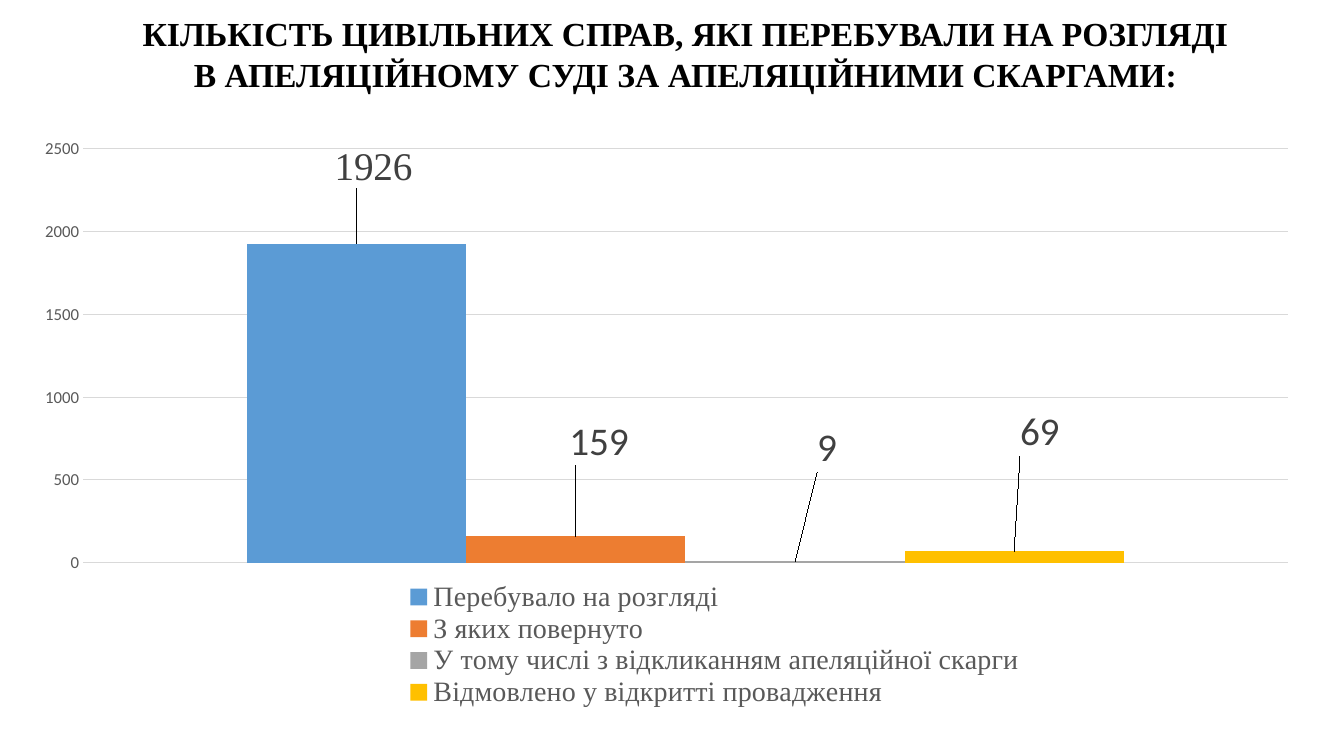
"""Build a slide with a column chart of civil cases in the court of appeal."""
from dataclasses import dataclass

from lxml import etree
from pptx import Presentation
from pptx import util as u
from pptx.chart import data as chart_data
from pptx.dml import color
from pptx.enum import chart as chart_enum
from pptx.enum import text
from pptx.oxml import ns


@dataclass(frozen=True)
class Theme:
    """Colours, fonts and type sizes of the slide."""
    serif: str = "Times New Roman"
    sans: str = "Calibri"
    title: str = "000000"
    muted: str = "595959"
    label: str = "404040"
    grid: str = "D9D9D9"
    title_size: int = 24
    axis_size: int = 12
    legend_size: int = 20
    label_size: int = 28


THEME = Theme()
TITLE = (
    "КІЛЬКІСТЬ ЦИВІЛЬНИХ СПРАВ, ЯКІ ПЕРЕБУВАЛИ НА РОЗГЛЯДІ",
    "В АПЕЛЯЦІЙНОМУ СУДІ ЗА АПЕЛЯЦІЙНИМИ СКАРГАМИ:",
)
CASES = (
    ("Перебувало на розгляді", 1926, "5B9BD5", THEME.serif, (0.013, -0.085)),
    ("З яких повернуто", 159, "ED7D31", THEME.sans, (0.018, -0.11)),
    ("У тому числі з відкликанням апеляційної скарги", 9, "A5A5A5",
     THEME.sans, (0.025, -0.14)),
    ("Відмовлено у відкритті провадження", 69, "FFC000", THEME.sans,
     (0.02, -0.15)),
)


def style_font(font, name, size, colour, bold=False):
    """Set the face, size, colour and weight of a font."""
    font.name = name
    font.size = u.Pt(size)
    font.bold = bold
    font.color.rgb = color.RGBColor.from_string(colour)


def set_layout(element, index, **settings):
    """Give a chart element a manual layout at a child index."""
    for old in element.findall(ns.qn("c:layout")):
        element.remove(old)
    layout = etree.Element(ns.qn("c:layout"))
    manual = etree.SubElement(layout, ns.qn("c:manualLayout"))
    for tag, value in settings.items():
        etree.SubElement(manual, ns.qn(f"c:{tag}")).set("val", str(value))
    element.insert(index, layout)


def add_title(page, lines):
    """Add the centred heading, one paragraph per line."""
    box = page.shapes.add_textbox(u.Pt(90.7), u.Pt(5.8), u.Pt(797.8), u.Pt(65.5))
    frame = box.text_frame
    frame.word_wrap = False
    frame.auto_size = text.MSO_AUTO_SIZE.SHAPE_TO_FIT_TEXT
    frame.text = "\n".join(lines)
    for para in frame.paragraphs:
        para.alignment = text.PP_ALIGN.CENTER
        style_font(para.font, THEME.serif, THEME.title_size, THEME.title, True)


def style_axes(chart):
    """Hide the category axis and lighten the value axis."""
    chart.category_axis.visible = False
    axis = chart.value_axis
    axis.minimum_scale, axis.maximum_scale, axis.major_unit = 0, 2500, 500
    axis.major_tick_mark = chart_enum.XL_TICK_MARK.NONE
    axis.format.line.fill.background()
    style_font(axis.tick_labels.font, THEME.sans, THEME.axis_size, THEME.muted)
    line = axis.major_gridlines.format.line
    line.width = u.Pt(0.75)
    line.color.rgb = color.RGBColor.from_string(THEME.grid)


def style_series(series, fill, face, offset):
    """Colour one series and shift its value label."""
    series.format.fill.solid()
    series.format.fill.fore_color.rgb = color.RGBColor.from_string(fill)
    label = series.points[0].data_label
    style_font(label.font, face, THEME.label_size, THEME.label)
    label.position = chart_enum.XL_LABEL_POSITION.OUTSIDE_END
    element = series.data_labels._element.find(ns.qn("c:dLbl"))
    set_layout(element, 1, x=offset[0], y=offset[1])


def add_legend(chart):
    """Add the stacked legend below the plot."""
    chart.has_legend = True
    legend = chart.legend
    legend.position = chart_enum.XL_LEGEND_POSITION.BOTTOM
    legend.include_in_layout = False
    style_font(legend.font, THEME.serif, THEME.legend_size, THEME.muted)
    set_layout(legend._element, 1, xMode="edge", yMode="edge",
               x=0.3, y=0.74, w=0.48, h=0.21)


def add_case_chart(page, cases):
    """Add the clustered columns, one series per kind of case."""
    values = chart_data.CategoryChartData()
    values.categories = ["1"]
    for name, count, *_ in cases:
        values.add_series(name, [count])
    chart = page.shapes.add_chart(
        chart_enum.XL_CHART_TYPE.COLUMN_CLUSTERED,
        u.Pt(17.3), u.Pt(94.3), u.Pt(913.7), u.Pt(433.4), values).chart
    chart.has_title = False
    plot = chart.plots[0]
    plot.gap_width, plot.overlap, plot.vary_by_categories = 150, 0, False
    style_axes(chart)
    for series, (_, _, fill, face, offset) in zip(plot.series, cases):
        style_series(series, fill, face, offset)
    add_legend(chart)
    area = chart.element.find(f".//{ns.qn('c:plotArea')}")
    set_layout(area, 0, layoutTarget="inner", xMode="edge", yMode="edge",
               x=0.046, y=0.028, w=0.942, h=0.682)


def main():
    """Build and save the deck."""
    deck = Presentation()
    deck.slide_width, deck.slide_height = u.Pt(960), u.Pt(540)
    page = deck.slides.add_slide(deck.slide_layouts[6])
    add_title(page, TITLE)
    add_case_chart(page, CASES)
    deck.save("out.pptx")


if __name__ == "__main__":
    main()
